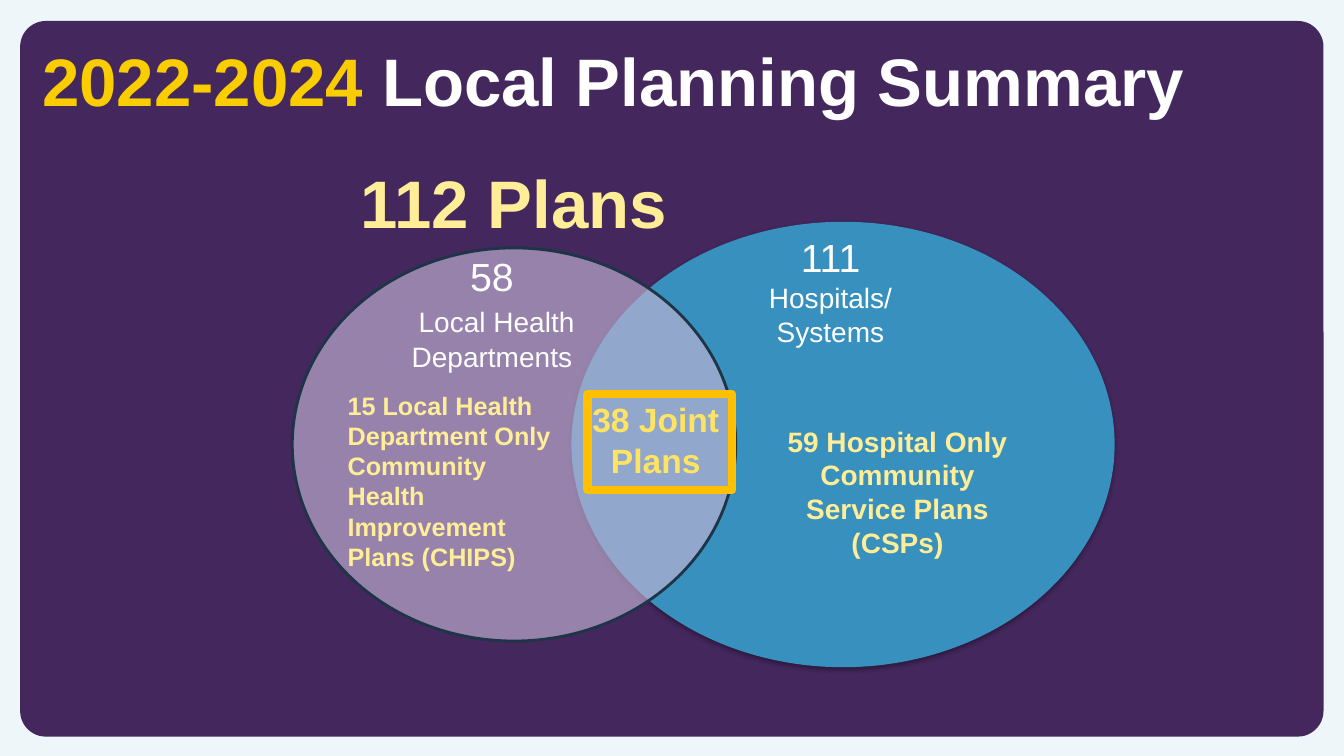
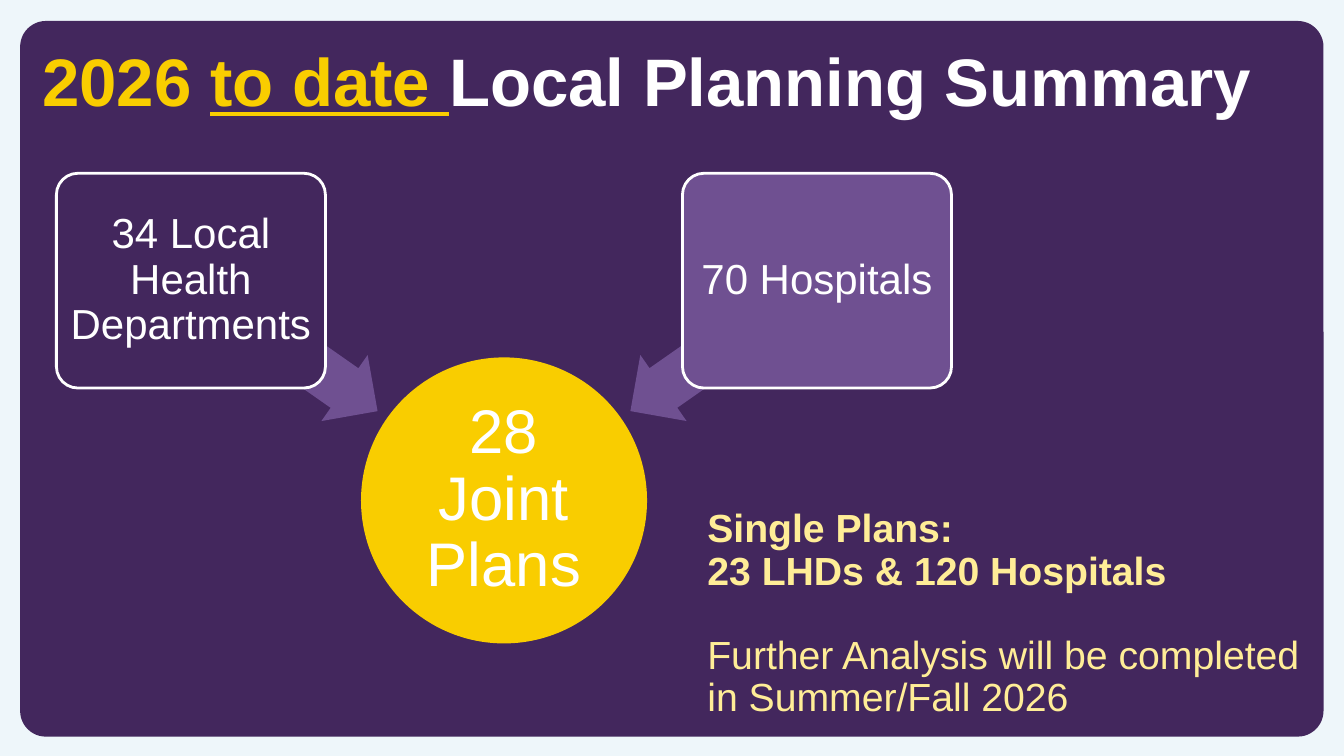
from pptx import Presentation
from pptx.dml.color import RGBColor
from pptx.enum.shapes import MSO_SHAPE
from pptx.enum.text import MSO_ANCHOR, PP_ALIGN
from pptx.oxml.ns import qn
from pptx.util import Pt
from lxml import etree

LEFT, CENTER = PP_ALIGN.LEFT, PP_ALIGN.CENTER
MIDDLE = MSO_ANCHOR.MIDDLE
OVAL, RECT = MSO_SHAPE.OVAL, MSO_SHAPE.RECTANGLE
ROUND_RECT, LEFT_ARROW = MSO_SHAPE.ROUNDED_RECTANGLE, MSO_SHAPE.LEFT_ARROW

PAGE = RGBColor(0xEE, 0xF6, 0xFA)
PURPLE = RGBColor(0x43, 0x27, 0x5D)
VIOLET = RGBColor(0x6F, 0x50, 0x91)
LILAC = RGBColor(0xC5, 0xB6, 0xD6)
BLUE = RGBColor(0x37, 0x90, 0xBD)
NAVY = RGBColor(0x1E, 0x35, 0x48)
GOLD = RGBColor(0xF9, 0xCD, 0x00)
AMBER = RGBColor(0xFF, 0xC0, 0x00)
CREAM = RGBColor(0xFF, 0xED, 0x97)
YELLOW = RGBColor(0xFF, 0xE3, 0x62)
WHITE = RGBColor(0xFF, 0xFF, 0xFF)

FONT = "Arial"


# Shared helpers
def add_run(paragraph, text, size, color, bold=False, underline=False):
    run = paragraph.add_run()
    run.text = text
    font = run.font
    font.name, font.size, font.bold = FONT, Pt(size), bold
    font.underline = underline
    font.color.rgb = color


def write(frame, paragraphs, align=LEFT, spacing=None):
    """Fill a frame; each paragraph is a list of run tuples."""
    frame.word_wrap = True
    for i, runs in enumerate(paragraphs):
        paragraph = frame.add_paragraph() if i else frame.paragraphs[0]
        paragraph.alignment = align
        if spacing:
            paragraph.line_spacing = spacing
        for run in runs:
            add_run(paragraph, *run)


def add_text(slide, x, y, w, h, paragraphs, align=LEFT, spacing=None):
    box = slide.shapes.add_textbox(Pt(x), Pt(y), Pt(w), Pt(h))
    write(box.text_frame, paragraphs, align, spacing)
    return box.text_frame


def add_block(slide, kind, x, y, w, h, fill=None, line=None, weight=2, adjust=()):
    block = slide.shapes.add_shape(kind, Pt(x), Pt(y), Pt(w), Pt(h))
    block.shadow.inherit = False
    for i, value in enumerate(adjust):
        block.adjustments[i] = value
    if fill is None:
        block.fill.background()
    else:
        block.fill.solid()
        block.fill.fore_color.rgb = fill
    if line is None:
        block.line.fill.background()
    else:
        block.line.color.rgb = line
        block.line.width = Pt(weight)
    return block


def add_label(block, text, size, inset):
    frame = block.text_frame
    frame.margin_left = frame.margin_right = Pt(inset)
    frame.margin_top = frame.margin_bottom = Pt(inset)
    frame.vertical_anchor = MIDDLE
    write(frame, [[(text, size, WHITE)]], CENTER, 0.9)


def set_alpha(block, percent):
    color = block.fill._xPr.find(qn("a:solidFill"))[0]
    etree.SubElement(color, qn("a:alpha"), val=str(percent * 1000))


def set_shadow(block, percent, blur, distance):
    effects = block._element.spPr.find(qn("a:effectLst"))
    shadow = etree.SubElement(effects, qn("a:outerShdw"), blurRad=str(Pt(blur)),
                              dist=str(Pt(distance)), dir="5400000", rotWithShape="0")
    color = etree.SubElement(shadow, qn("a:srgbClr"), val="000000")
    etree.SubElement(color, qn("a:alpha"), val=str(percent * 1000))


def new_slide(prs, title_runs):
    slide = prs.slides.add_slide(prs.slide_layouts[6])
    slide.background.fill.solid()
    slide.background.fill.fore_color.rgb = PAGE
    add_block(slide, ROUND_RECT, 14.4, 15, 931, 511.2, PURPLE, adjust=[0.036])
    add_text(slide, 23, 24.5, 898, 65.5,
             [[(text, 48, color, True, underline) for text, color, underline in title_runs]])
    return slide


# Overlapping plan circles
def add_venn(slide, x, y):
    hospitals = add_block(slide, OVAL, x + 199.4, y, 388, 318.2, BLUE)
    set_shadow(hospitals, 35, 3.1, 1.8)
    departments = add_block(slide, OVAL, x, y + 18.7, 316.8, 280.8, LILAC, NAVY)
    set_alpha(departments, 64)

    texts = [
        (38.2, 18, 208.8, 162.7, CENTER,
         [[("58", 28, WHITE)],
          [(" ", 24, WHITE), ("Local Health Departments", 20, WHITE)]]),
        (313.9, 5, 141.1, 167, CENTER,
         [[("111 ", 28, WHITE), ("Hospitals/ Systems", 20, WHITE)]]),
        (339.8, 141.1, 185, 128, CENTER,
         [[("59 Hospital Only Community Service Plans (CSPs)", 20, CREAM, True)]]),
        (32.4, 116.6, 164.2, 162.7, LEFT,
         [[("15 Local Health Department Only Community Health "
            "Improvement Plans (CHIPS)", 18, CREAM, True)]]),
        (193.7, 123.1, 131.8, 65.5, CENTER,
         [[("38 Joint Plans", 24, YELLOW, True)]]),
    ]
    for dx, dy, w, h, align, paragraphs in texts:
        add_text(slide, x + dx, y + dy, w, h, paragraphs, align)

    joint_frame = add_block(slide, RECT, x + 211, y + 123.1, 103, 68.4,
                            line=AMBER, weight=6)
    etree.SubElement(joint_frame.line._get_or_add_ln(), qn("a:round"))


# Two partners leading to one circle
def add_funnel(slide, x, y, w):
    circle, card_w, card_h = 202.3, 192.2, 153.4
    arrow_w, arrow_h, arrow_inset = 162.7, 57.6, 81.4

    joint = add_block(slide, OVAL, x + (w - circle) / 2, y + 132.5,
                      circle, circle, GOLD, GOLD)
    add_label(joint, "28 Joint Plans", 44, 2)

    partners = [
        ("34 Local Health Departments", PURPLE, 0, arrow_inset, 215),
        ("70 Hospitals", VIOLET, w - card_w, w - arrow_inset - arrow_w, 325),
    ]
    for text, fill, card_dx, arrow_dx, angle in partners:
        arrow = add_block(slide, LEFT_ARROW, x + arrow_dx, y + 94.4,
                          arrow_w, arrow_h, VIOLET, adjust=[0.6, 0.5])
        arrow.rotation = angle
        card = add_block(slide, ROUND_RECT, x + card_dx, y, card_w, card_h,
                         fill, WHITE, adjust=[0.1])
        add_label(card, text, 30, 4)


def build_past_summary(prs):
    slide = new_slide(prs, [("2022-2024", GOLD, False),
                            (" Local Planning Summary", WHITE, False)])
    add_text(slide, 7.2, 111.6, 720, 130.3, [[("112 Plans", 48, CREAM, True)]], CENTER)
    add_venn(slide, 208.8, 158.4)


def build_current_summary(prs):
    slide = new_slide(prs, [("2026 ", GOLD, False), ("to date ", GOLD, True),
                            ("Local Planning Summary", WHITE, False)])
    single_plans = add_text(
        slide, 498.2, 360, 446.4, 171.4,
        [[("Single Plans:", 28, CREAM, True)],
         [("23 LHDs & 120 Hospitals", 28, CREAM, True)],
         [("Further Analysis will be completed in Summer/Fall 2026", 28, CREAM)]],
        spacing=0.9)
    single_plans.paragraphs[2].space_before = Pt(30)
    add_funnel(slide, 40.3, 123.8, 639.4)


def main():
    prs = Presentation()
    prs.slide_width, prs.slide_height = Pt(960), Pt(540)
    build_past_summary(prs)
    build_current_summary(prs)
    prs.save("out.pptx")


if __name__ == "__main__":
    main()
